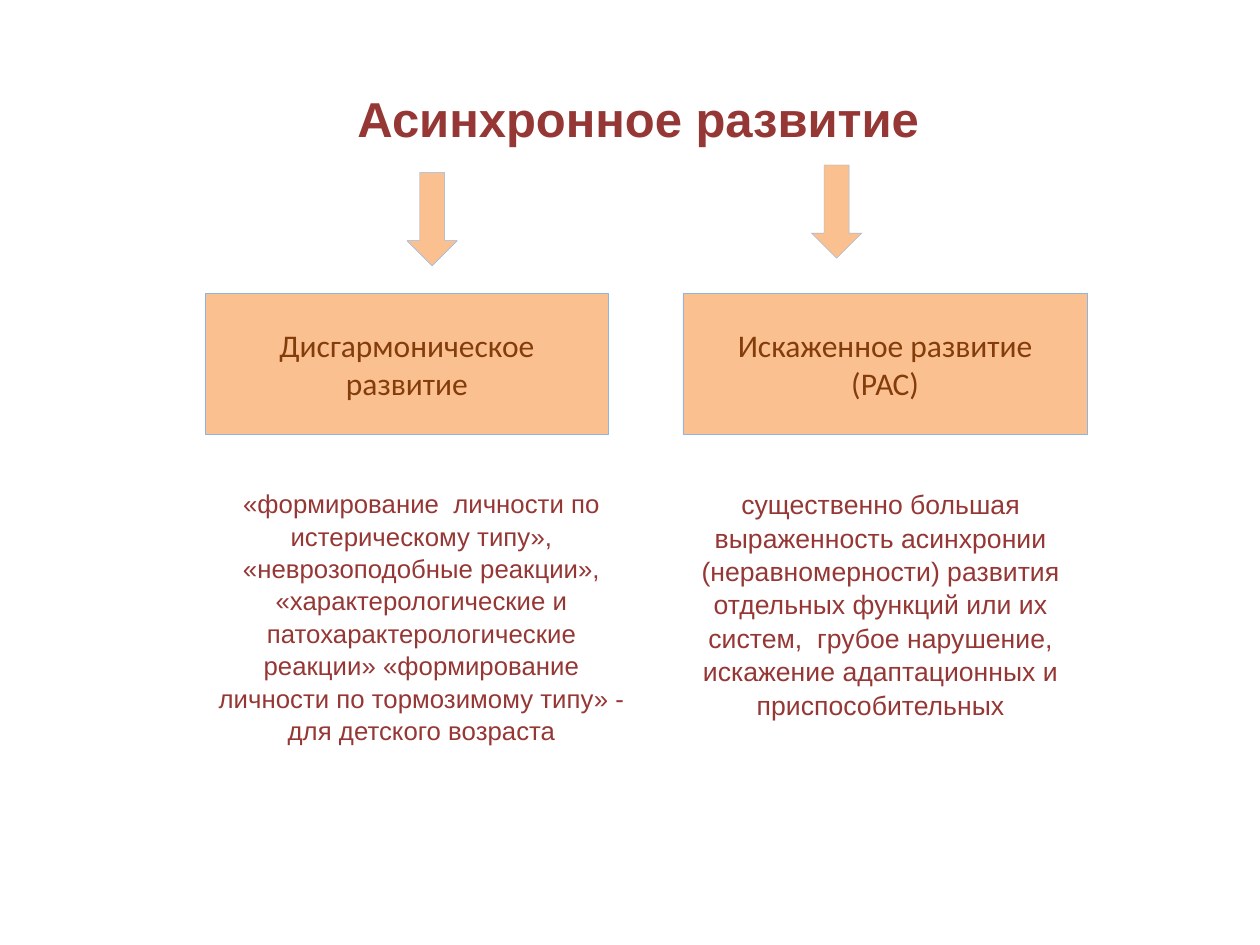
from dataclasses import dataclass

from lxml.etree import SubElement
from pptx import Presentation
from pptx.dml.color import RGBColor
from pptx.enum.shapes import MSO_SHAPE as Preset
from pptx.enum.text import MSO_ANCHOR as Anchor, MSO_AUTO_SIZE as AutoSize, PP_ALIGN as Align
from pptx.oxml.ns import qn
from pptx.util import Inches, Pt


@dataclass(frozen=True)
class Theme:
    heading: str = "953735"
    label: str = "843C0B"
    fill: str = "FAC090"
    outline: str = "8EB4E3"
    text_font: str = "Arial"
    label_font: str = "Calibri"
    title_size: float = 28
    label_size: float = 18
    left_size: float = 14.7
    right_size: float = 15.2


THEME = Theme()
TITLE = "Асинхронное развитие"
BRANCHES = [
    {
        "label": ["Дисгармоническое развитие"],
        "box": (1.63, 2.33, 3.2, 1.12),
        "arrow": (3.23, 1.37, 0.4, 0.74),
        "details": "«формирование  личности по истерическому типу», "
                   "«неврозоподобные реакции», «характерологические и "
                   "патохарактерологические реакции» «формирование личности "
                   "по тормозимому типу» - для детского возраста",
        "details_at": (1.54, 3.81, 3.52, 2.69),
        "size": THEME.left_size,
        "indent": 0.09,
    },
    {
        "label": ["Искаженное развитие", "(РАС)"],
        "box": (5.42, 2.33, 3.21, 1.12),
        "arrow": (6.44, 1.31, 0.4, 0.74),
        "details": "существенно большая выраженность асинхронии "
                   "(неравномерности) развития отдельных функций или их "
                   "систем,  грубое нарушение, искажение адаптационных и "
                   "приспособительных",
        "details_at": (5.35, 3.81, 3.28, 2.69),
        "size": THEME.right_size,
        "indent": 0,
    },
]


def write(shape, lines, *, size, color, font=THEME.text_font, bold=False,
          anchor=Anchor.MIDDLE, spacing=1.0, indent=None):
    """Fill a shape with centred lines; an indent also removes the bullet."""
    frame = shape.text_frame
    frame.word_wrap = True
    frame.auto_size = AutoSize.NONE
    frame.vertical_anchor = anchor
    frame.text = "\n".join(lines)
    for paragraph in frame.paragraphs:
        if indent is not None:
            properties = paragraph._p.get_or_add_pPr()
            properties.set("marL", str(Inches(indent)))
            properties.set("indent", "0")
            SubElement(properties, qn("a:buNone"))
        paragraph.alignment = Align.CENTER
        paragraph.line_spacing = spacing
        paragraph.space_before = Pt(0)
        for run in paragraph.runs:
            run.font.name = font
            run.font.size = Pt(size)
            run.font.bold = bold
            run.font.color.rgb = RGBColor.from_string(color)


def place(placeholder, left, top, width, height):
    placeholder.left, placeholder.top = Inches(left), Inches(top)
    placeholder.width, placeholder.height = Inches(width), Inches(height)


def add_block(slide, preset, bounds):
    """Add a preset shape in the theme's fill and thin outline."""
    block = slide.shapes.add_shape(preset, *map(Inches, bounds))
    block.shadow.inherit = False
    block.fill.solid()
    block.fill.fore_color.rgb = RGBColor.from_string(THEME.fill)
    block.line.color.rgb = RGBColor.from_string(THEME.outline)
    block.line.width = Pt(0.25)
    return block


def add_branch(slide, branch, details):
    place(details, *branch["details_at"])
    write(details, [branch["details"]], size=branch["size"], color=THEME.heading,
          anchor=Anchor.TOP, spacing=1.05, indent=branch["indent"])
    box = add_block(slide, Preset.RECTANGLE, branch["box"])
    write(box, branch["label"], size=THEME.label_size, color=THEME.label,
          font=THEME.label_font)
    add_block(slide, Preset.DOWN_ARROW, branch["arrow"])


def main():
    deck = Presentation()
    deck.slide_width, deck.slide_height = Inches(10), Inches(7.5)
    two_content = deck.slide_layouts[3]
    slide = deck.slides.add_slide(two_content)
    title, *bodies = slide.placeholders
    place(title, 1.69, 0.6, 6.75, 0.67)
    write(title, [TITLE], size=THEME.title_size, color=THEME.heading, bold=True)
    for branch, details in zip(BRANCHES, bodies):
        add_branch(slide, branch, details)
    deck.save("out.pptx")


if __name__ == "__main__":
    main()
